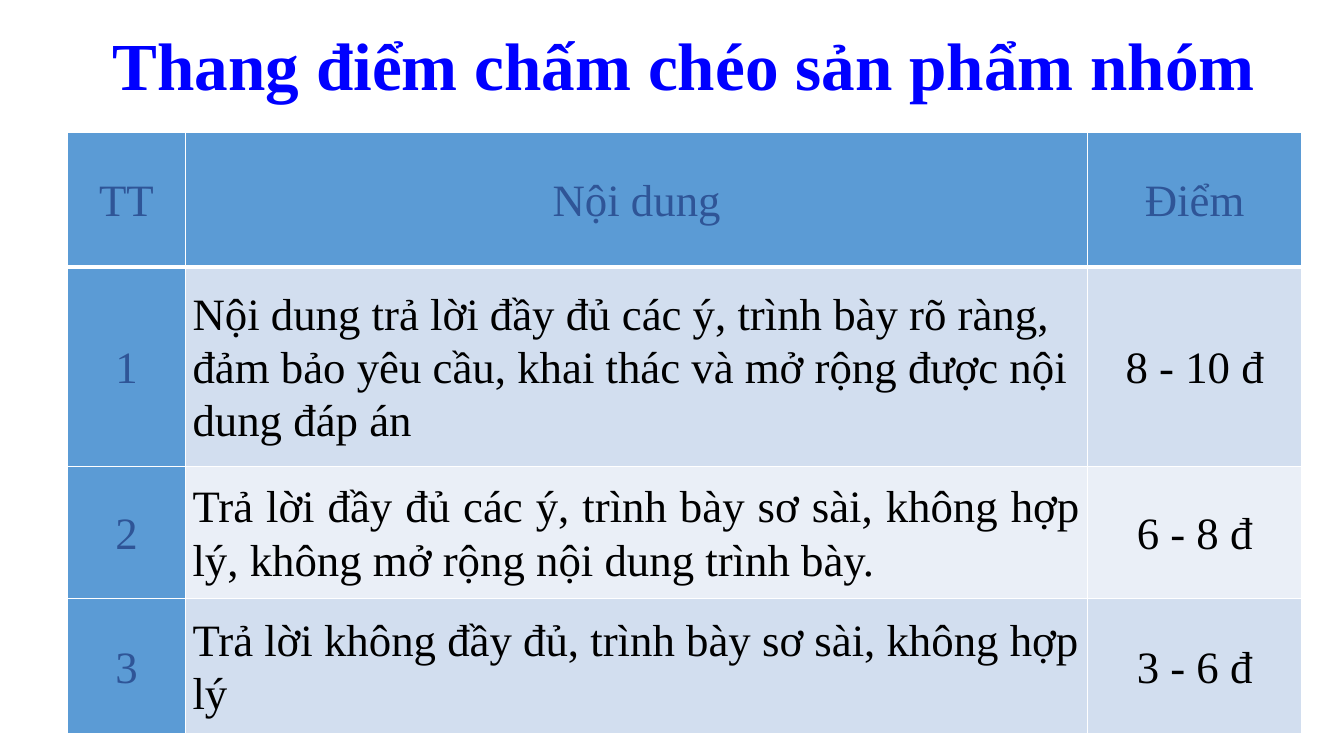
from dataclasses import dataclass

from lxml import etree
from pptx import Presentation
from pptx.dml.color import RGBColor
from pptx.enum import text
from pptx.oxml import ns
from pptx.util import Inches, Pt


@dataclass(frozen=True)
class Theme:
    font: str = "Times New Roman"
    title_size: int = 48
    table_size: int = 32
    title: str = "0000FF"
    heading: str = "2F5597"
    body: str = "000000"
    heading_fill: str = "5B9BD5"
    bands: tuple = ("D2DEEF", "EAEFF7")
    border: str = "FFFFFF"


LEFT, CENTER, JUSTIFY = (text.PP_ALIGN.LEFT, text.PP_ALIGN.CENTER,
                         text.PP_ALIGN.JUSTIFY)

TITLE = "Thang điểm chấm chéo sản phẩm nhóm"
COLUMNS = [1.17, 8.95, 2.12]
ROWS = [1.34, 1.98, 1.31, 1.34]
SCORES = [
    ("TT", "Nội dung", "Điểm"),
    ("1", "Nội dung trả lời đầy đủ các ý, trình bày rõ ràng, đảm bảo yêu cầu, "
          "khai thác và mở rộng được nội dung đáp án", "8 - 10 đ"),
    ("2", "Trả lời đầy đủ các ý, trình bày sơ sài, không hợp lý, "
          "không mở rộng nội dung trình bày. ", "6 - 8 đ"),
    ("3", "Trả lời không đầy đủ, trình bày sơ sài, không hợp lý", "3 - 6 đ"),
]
CRITERIA_ALIGN = [CENTER, LEFT, JUSTIFY, LEFT]


class SlideBuilder:
    def __init__(self, prs, theme):
        self.theme = theme
        self.slide = prs.slides.add_slide(prs.slide_layouts[5])

    def add_text(self, p, words, size, color, align, bold=False):
        p.alignment = align
        r = p.add_run()
        r.text = words
        r.font.name = self.theme.font
        r.font.size = Pt(size)
        r.font.bold = bold
        r.font.color.rgb = RGBColor.from_string(color)

    def title(self, words, left, top, width, height):
        sp = self.slide.shapes.title
        sp.left, sp.top = Inches(left), Inches(top)
        sp.width, sp.height = Inches(width), Inches(height)
        tf = sp.text_frame
        tf.word_wrap = True
        tf.auto_size = text.MSO_AUTO_SIZE.SHAPE_TO_FIT_TEXT
        tf.vertical_anchor = text.MSO_ANCHOR.TOP
        self.add_text(tf.paragraphs[0], words, self.theme.title_size,
                      self.theme.title, CENTER, bold=True)

    def border(self, cell, side, points):
        """Draw one side of a cell: L, R, T or B, called in that order."""
        ln = etree.SubElement(cell._tc.get_or_add_tcPr(),
                              ns.qn(f"a:ln{side}"), w=str(Pt(points)))
        fill = etree.SubElement(ln, ns.qn("a:solidFill"))
        etree.SubElement(fill, ns.qn("a:srgbClr"), val=self.theme.border)

    def cell(self, cell, words, row, col):
        theme = self.theme
        heading = row == 0 or col == 0
        cell.margin_left = cell.margin_right = Inches(0.07)
        cell.margin_top = cell.margin_bottom = 0
        cell.vertical_anchor = text.MSO_ANCHOR.MIDDLE
        for side in "LRTB":
            under_header = (row, side) in ((0, "B"), (1, "T"))
            self.border(cell, side, 3 if under_header else 1)
        cell.fill.solid()
        cell.fill.fore_color.rgb = RGBColor.from_string(
            theme.heading_fill if heading else theme.bands[(row - 1) % 2])
        p = cell.text_frame.paragraphs[0]
        p.line_spacing = 1.07
        self.add_text(p, words, theme.table_size,
                      theme.heading if heading else theme.body,
                      CRITERIA_ALIGN[row] if col == 1 else CENTER)

    def table(self, data, left, top, columns, rows):
        table = self.slide.shapes.add_table(
            len(rows), len(columns), Inches(left), Inches(top),
            Inches(sum(columns)), Inches(sum(rows))).table
        for column, width in zip(table.columns, columns):
            column.width = Inches(width)
        for row, height in zip(table.rows, rows):
            row.height = Inches(height)
        for i, record in enumerate(data):
            for j, words in enumerate(record):
                self.cell(table.cell(i, j), words, i, j)


def main():
    prs = Presentation()
    prs.slide_width, prs.slide_height = Inches(13.33), Inches(7.5)
    builder = SlideBuilder(prs, Theme())
    builder.title(TITLE, 0.52, 0.18, 12.53, 0.91)
    builder.table(SCORES, 0.67, 1.31, COLUMNS, ROWS)
    prs.save("out.pptx")


if __name__ == "__main__":
    main()
